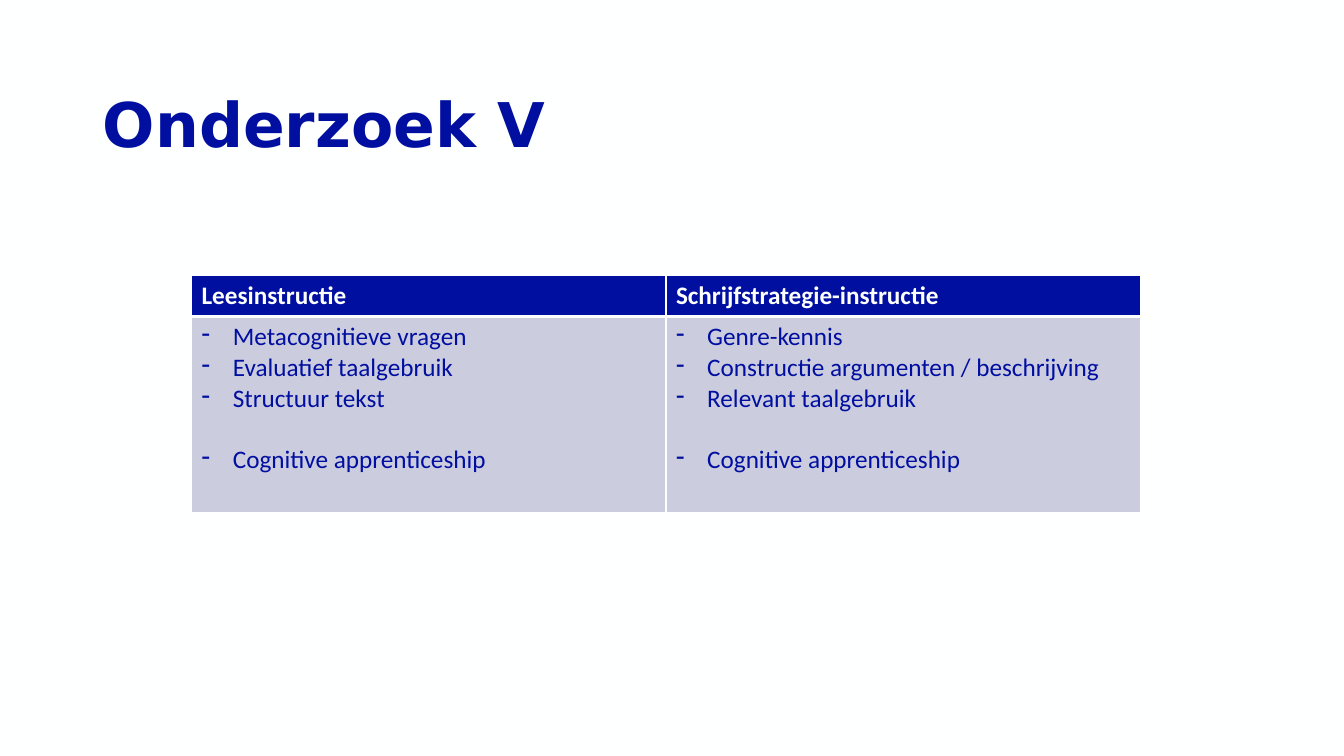
import pptx
import pptx.dml.color
import pptx.enum.text
import pptx.oxml
import pptx.oxml.ns
import pptx.util

NAVY, PAPER, LAVENDER = "000FA0", "FEFFFF", "CCCCDF"

COLUMNS = {
    "Leesinstructie": [
        "Metacognitieve vragen",
        "Evaluatief taalgebruik",
        "Structuur tekst",
        "Cognitive apprenticeship",
    ],
    "Schrijfstrategie-instructie": [
        "Genre-kennis",
        "Constructie argumenten / beschrijving",
        "Relevant taalgebruik",
        "Cognitive apprenticeship",
    ],
}


def colour(hex_code):
    return pptx.dml.color.RGBColor.from_string(hex_code)


def drawing_element(tag, attributes="", content=""):
    namespace = pptx.oxml.ns.nsdecls("a")
    return pptx.oxml.parse_xml(f"<a:{tag} {namespace} {attributes}>{content}</a:{tag}>")


class ResearchSlide:
    TITLE = {"name": "DejaVu Sans", "size": pptx.util.Pt(44), "bold": True}
    HEADING = {"name": "Calibri", "size": pptx.util.Pt(18), "bold": True}
    ITEM = {**HEADING, "bold": False}
    HANGING = pptx.util.Inches(0.31)

    def __init__(self, deck):
        self.width, self.height = deck.slide_width, deck.slide_height
        self.slide = deck.slides.add_slide(deck.slide_layouts[5])
        self.fill(self.slide.background, PAPER)

    def across(self, percent):
        return round(self.width * percent / 100)

    def down(self, percent):
        return round(self.height * percent / 100)

    def fill(self, part, hex_code):
        part.fill.solid()
        part.fill.fore_color.rgb = colour(hex_code)

    def styled_run(self, paragraph, wording, style, hex_code):
        run = paragraph.add_run()
        run.text = wording
        for attribute, value in style.items():
            setattr(run.font, attribute, value)
        run.font.color.rgb = colour(hex_code)

    def title(self, wording, left, top, width, height):
        heading = self.slide.shapes.title
        place = {"left": self.across(left), "top": self.down(top),
                 "width": self.across(width), "height": self.down(height)}
        for attribute, value in place.items():
            setattr(heading, attribute, value)
        frame = heading.text_frame
        frame.word_wrap = True
        frame.vertical_anchor = pptx.enum.text.MSO_ANCHOR.MIDDLE
        paragraph = frame.paragraphs[0]
        paragraph.alignment = pptx.enum.text.PP_ALIGN.LEFT
        paragraph.line_spacing = 0.9
        self.styled_run(paragraph, wording, self.TITLE, NAVY)

    def borders(self, cell, **widths):
        properties = cell._tc.get_or_add_tcPr()
        for position, side in enumerate("LRTB"):
            line = drawing_element(
                f"ln{side}", f'w="{pptx.util.Pt(widths.get(side, 1))}"',
                f'<a:solidFill><a:srgbClr val="{PAPER}"/></a:solidFill>')
            properties.insert(position, line)

    def item(self, paragraph, wording):
        properties = paragraph._p.get_or_add_pPr()
        properties.set("marL", str(self.HANGING))
        properties.set("indent", str(-self.HANGING))
        properties.append(drawing_element("buFontTx"))
        properties.append(drawing_element("buChar", 'char="-"'))
        self.styled_run(paragraph, wording, self.ITEM, NAVY)

    def comparison(self, columns, left, top, width, row_heights):
        table = self.slide.shapes.add_table(
            len(row_heights), len(columns), self.across(left), self.down(top),
            self.across(width), self.down(sum(row_heights))).table
        for row, height in zip(table.rows, row_heights):
            row.height = self.down(height)

        for index, (heading, items) in enumerate(columns.items()):
            # Column heading
            header = table.cell(0, index)
            self.fill(header, NAVY)
            self.borders(header, B=3)
            self.styled_run(header.text_frame.paragraphs[0], heading, self.HEADING, PAPER)

            # Items, with the shared teaching method set apart
            body = table.cell(1, index)
            self.fill(body, LAVENDER)
            self.borders(body, T=3)
            frame = body.text_frame
            for number, wording in enumerate(items):
                paragraph = frame.add_paragraph() if number else frame.paragraphs[0]
                self.item(paragraph, wording)
            paragraph.space_before = pptx.util.Pt(22)


def main():
    deck = pptx.Presentation()
    deck.slide_width = pptx.util.Inches(13.33)
    deck.slide_height = pptx.util.Inches(7.5)

    # Places and sizes are percentages of the slide
    research = ResearchSlide(deck)
    research.title("Onderzoek V", left=6.9, top=9.2, width=77.94, height=15.33)
    research.comparison(COLUMNS, left=14.25, top=36.4, width=70.6,
                        row_heights=[5.47, 25.9])
    deck.save("out.pptx")


if __name__ == "__main__":
    main()
